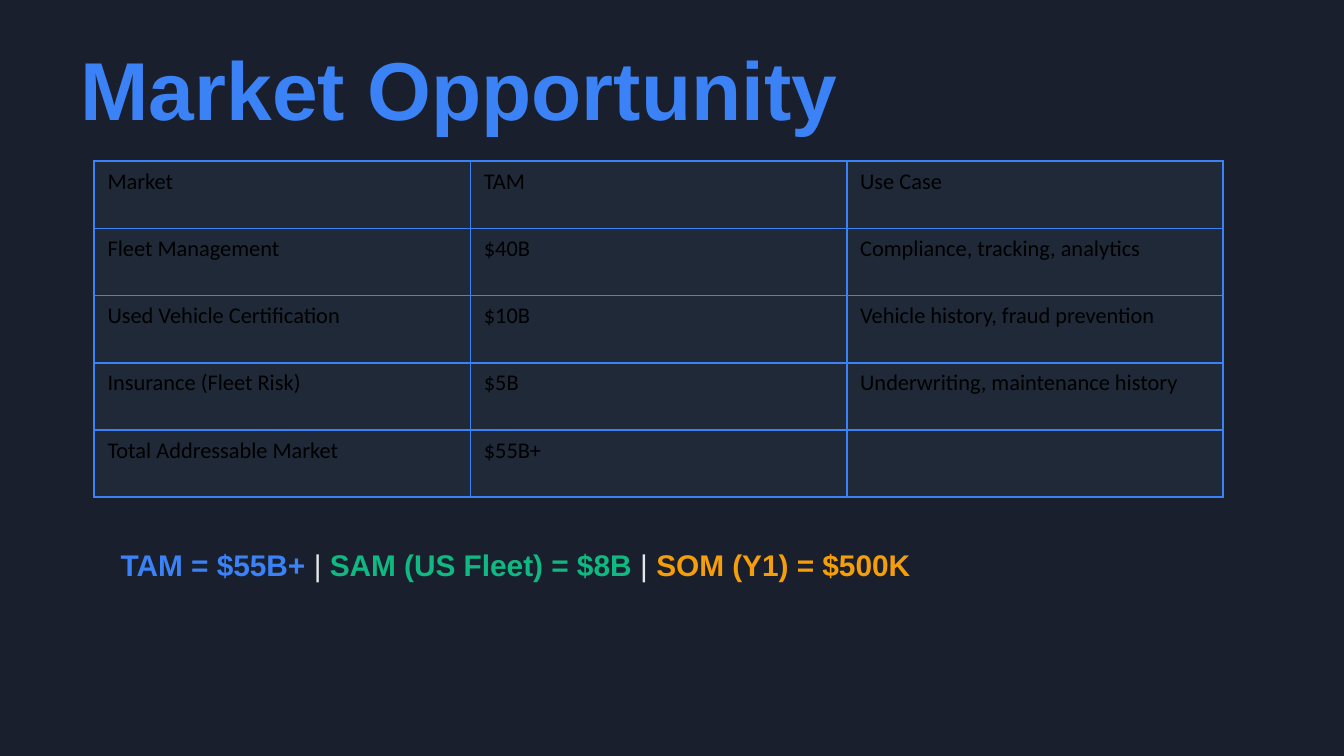
from lxml.etree import SubElement as Sub
from pptx import Presentation
from pptx.dml.color import RGBColor
from pptx.enum.text import MSO_ANCHOR as Anchor
from pptx.oxml.ns import qn
from pptx.util import Inches, Pt

BLUE, GREEN, AMBER = "3B82F6", "10B981", "F59E0B"
PALE, BLACK, NAVY, SLATE = "E5E7EB", "000000", "1A1F2E", "1F2937"

ROWS = [
    ("Market", "TAM", "Use Case"),
    ("Fleet Management", "$40B", "Compliance, tracking, analytics"),
    ("Used Vehicle Certification", "$10B", "Vehicle history, fraud prevention"),
    ("Insurance (Fleet Risk)", "$5B", "Underwriting, maintenance history"),
    ("Total Addressable Market", "$55B+", ""),
]
BAR = (" | ", PALE, False)
TOTALS = [
    ("TAM = $55B+", BLUE, True), BAR,
    ("SAM (US Fleet) = $8B", GREEN, True), BAR,
    ("SOM (Y1) = $500K", AMBER, True),
]


def paint(fill, color):
    fill.solid()
    fill.fore_color.rgb = RGBColor.from_string(color)


def add_line(slide, box, size, parts):
    """One line of text in Arial, made of (text, color, bold) parts."""
    frame = slide.shapes.add_textbox(*map(Inches, box)).text_frame
    frame.word_wrap = True
    frame.vertical_anchor = Anchor.MIDDLE
    para = frame.paragraphs[0]
    para.font.name, para.font.size = "Arial", Pt(size)
    for text, color, bold in parts:
        run = para.add_run()
        run.text = text
        run.font.bold = bold
        paint(run.font.fill, color)


def add_edges(cell, color):
    props = cell._tc.get_or_add_tcPr()
    for side in "LRTB":
        edge = Sub(props, qn(f"a:ln{side}"), w=str(Pt(1)))
        Sub(Sub(edge, qn("a:solidFill")), qn("a:srgbClr"), val=color)


def add_grid(slide, box, width, rows):
    shape = slide.shapes.add_table(len(rows), len(rows[0]), *map(Inches, box))
    table = shape.table
    table.first_row = table.horz_banding = False
    for col in table.columns:
        col.width = Inches(width)
    for r, row in enumerate(rows):
        for c, text in enumerate(row):
            cell = table.cell(r, c)
            add_edges(cell, BLUE)
            paint(cell.fill, SLATE)
            cell.text = text
            font = cell.text_frame.paragraphs[0].font
            font.name, font.size = "Calibri", Pt(12)
            paint(font.fill, BLACK)


def main():
    # Widescreen 16:9 page
    deck = Presentation()
    deck.slide_width, deck.slide_height = Inches(10), Inches(10 * 9 / 16)
    slide = deck.slides.add_slide(deck.slide_layouts[6])
    paint(slide.background.fill, NAVY)

    # Title
    add_line(slide, (0.5, 0.4, 9, 0.5), 44, [("Market Opportunity", BLUE, True)])
    # Market table
    add_grid(slide, (0.7, 1.2, 8.6, 2.5), 2.8, ROWS)
    # Totals
    add_line(slide, (0.8, 4, 8.4, 0.4), 16, TOTALS)

    deck.save("out.pptx")


if __name__ == "__main__":
    main()
